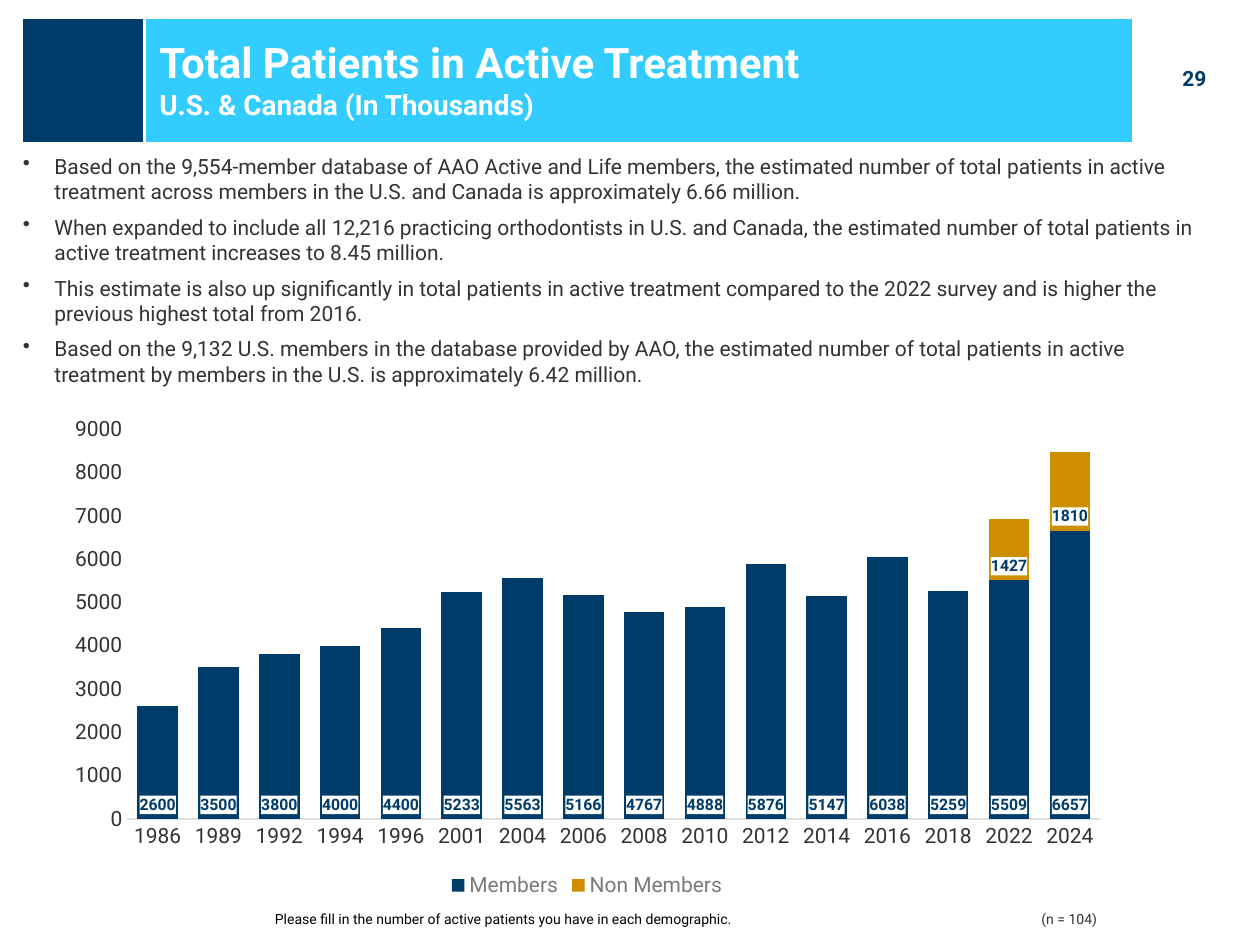
import pptx
import pptx.util
import pptx.chart.data
import pptx.dml.color
import pptx.enum.chart as ec
import pptx.enum.shapes as es
import pptx.enum.text as et
import pptx.oxml
import pptx.oxml.ns
import pptx.oxml.xmlchemy

Pt = pptx.util.Pt
qn = pptx.oxml.ns.qn

# Content
FONT = "Roboto"
COLORS = {"navy": "003C69", "sky": "33CCFF", "gold": "CE8E00", "ink": "333333",
          "gray": "7A7A7A", "rule": "E0E0E0", "white": "FFFFFF", "black": "000000"}
BANDS = [("sky", 72, 576), ("navy", 12, 70.5)]
TITLE = "Total Patients in Active Treatment"
SUB = "U.S. & Canada (In Thousands)"
POINTS = [
    "Based on the 9,554-member database of AAO Active and Life members, the estimated number of total patients in active treatment across members in the U.S. and Canada is approximately 6.66 million.",
    "When expanded to include all 12,216 practicing orthodontists in U.S. and Canada, the estimated number of total patients in active treatment increases to 8.45 million.",
    "This estimate is also up significantly in total patients in active treatment compared to the 2022 survey and is higher the previous highest total from 2016.",
    "Based on the 9,132 U.S. members in the database provided by AAO, the estimated number of total patients in active treatment by members in the U.S. is approximately 6.42 million.",
]
NOTES = [("(n = 104)", 588, 56, "ink"),
         ("Please fill in the number of active patients you have in each demographic.",
          150, 336, "black")]
YEARS = ["1986", "1989", "1992", "1994", "1996", "2001", "2004", "2006",
         "2008", "2010", "2012", "2014", "2016", "2018", "2022", "2024"]
SERIES = [
    ("Members", "navy", [2600, 3500, 3800, 4000, 4400, 5233, 5563, 5166,
                         4767, 4888, 5876, 5147, 6038, 5259, 5509, 6657]),
    ("Non Members", "gold", [None] * 14 + [1427, 1810]),
]
PLOT = {"x": 0.07, "y": 0.04, "w": 0.91, "h": 0.79}  # shares of the chart frame


def rgb(name):
    return pptx.dml.color.RGBColor.from_string(COLORS[name])


def style(font, size, color, bold=False):
    font.name, font.size, font.bold = FONT, Pt(size), bold
    font.color.rgb = rgb(color)


def paint(fill, color):
    fill.solid()
    fill.fore_color.rgb = rgb(color)


def add_text(box, lines, gap=0, bullet=False):
    """Write (text, size, color, bold) lines into a new text box."""
    frame = slide.shapes.add_textbox(*map(Pt, box)).text_frame
    frame.word_wrap = True
    for i, (text, *look) in enumerate(lines):
        para = frame.add_paragraph() if i else frame.paragraphs[0]
        para.text = text
        if i and gap:
            para.space_before = Pt(gap)
        if bullet:
            props = para._p.get_or_add_pPr()
            props.set("marL", str(Pt(18)))
            props.set("indent", str(-Pt(18)))
            mark = pptx.oxml.xmlchemy.OxmlElement("a:buChar")
            mark.set("char", "•")
            props.append(mark)
        style(para.font, *look)
    return frame


deck = pptx.Presentation()
deck.slide_width, deck.slide_height = Pt(720), Pt(540)
slide = deck.slides.add_slide(deck.slide_layouts[6])

# Header bands
for color, left, width in BANDS:
    band = slide.shapes.add_shape(es.MSO_SHAPE.RECTANGLE, Pt(left), Pt(10), Pt(width), Pt(72))
    band.shadow.inherit = False
    paint(band.fill, color)
    band.line.color.rgb = rgb("white")
    band.line.width = Pt(2)

# Title, page number, bullets and footnotes
head = add_text((84, 18, 618, 54), [(TITLE, 24, "white", True), (SUB, 16, "white", True)])
head.vertical_anchor = et.MSO_ANCHOR.MIDDLE
page = add_text((656.5, 34, 52, 22), [("29", 12, "navy", True)])
page.paragraphs[0].alignment = et.PP_ALIGN.CENTER
add_text((6, 84, 696, 145.5), [(text, 12, "ink") for text in POINTS], gap=6, bullet=True)
for text, left, width, color in NOTES:
    add_text((left, 517, width, 17), [(text, 8, color)])

# Stacked column chart
data = pptx.chart.data.CategoryChartData()
data.categories = YEARS
for name, color, vals in SERIES:
    data.add_series(name, vals)
chart = slide.shapes.add_chart(ec.XL_CHART_TYPE.COLUMN_STACKED, Pt(30), Pt(234),
                               Pt(611), Pt(282), data).chart
chart.has_title = False
style(chart.font, 10, "ink")
plot = chart.plots[0]
plot.gap_width, plot.overlap, plot.vary_by_categories = 50, 100, False

for ser, (name, color, vals) in zip(plot.series, SERIES):
    paint(ser.format.fill, color)
    tags = ser.data_labels
    tags.show_value = True
    tags.position = ec.XL_LABEL_POSITION.INSIDE_BASE
    style(tags.font, 9, "navy", True)
    # White plate behind the labels
    plate = pptx.oxml.parse_xml(
        f'<c:spPr {pptx.oxml.ns.nsdecls("c", "a")}><a:solidFill>'
        f'<a:srgbClr val="{COLORS["white"]}"/></a:solidFill></c:spPr>')
    tags._element.find(qn("c:txPr")).addprevious(plate)

# Axes and legend
for axis in (chart.category_axis, chart.value_axis):
    axis.major_tick_mark = axis.minor_tick_mark = ec.XL_TICK_MARK.NONE
    axis.has_major_gridlines = False
    style(axis.tick_labels.font, 12, "ink")
chart.category_axis.format.line.color.rgb = rgb("rule")
chart.category_axis.format.line.width = Pt(0.75)
scale = chart.value_axis
scale.minimum_scale, scale.maximum_scale, scale.major_unit = 0, 9000, 1000
scale.format.line.fill.background()
chart.has_legend = True
chart.legend.position = ec.XL_LEGEND_POSITION.BOTTOM
chart.legend.include_in_layout = False
style(chart.legend.font, 12, "gray")

# Fixed inner plot area
area = chart._chartSpace.chart.plotArea
for old in area.findall(qn("c:layout")):
    area.remove(old)
rules = [("layoutTarget", "inner"), ("xMode", "edge"), ("yMode", "edge"), *PLOT.items()]
parts = "".join(f'<c:{tag} val="{val}"/>' for tag, val in rules)
area.insert(0, pptx.oxml.parse_xml(
    f'<c:layout {pptx.oxml.ns.nsdecls("c")}><c:manualLayout>{parts}</c:manualLayout></c:layout>'))

deck.save("out.pptx")
